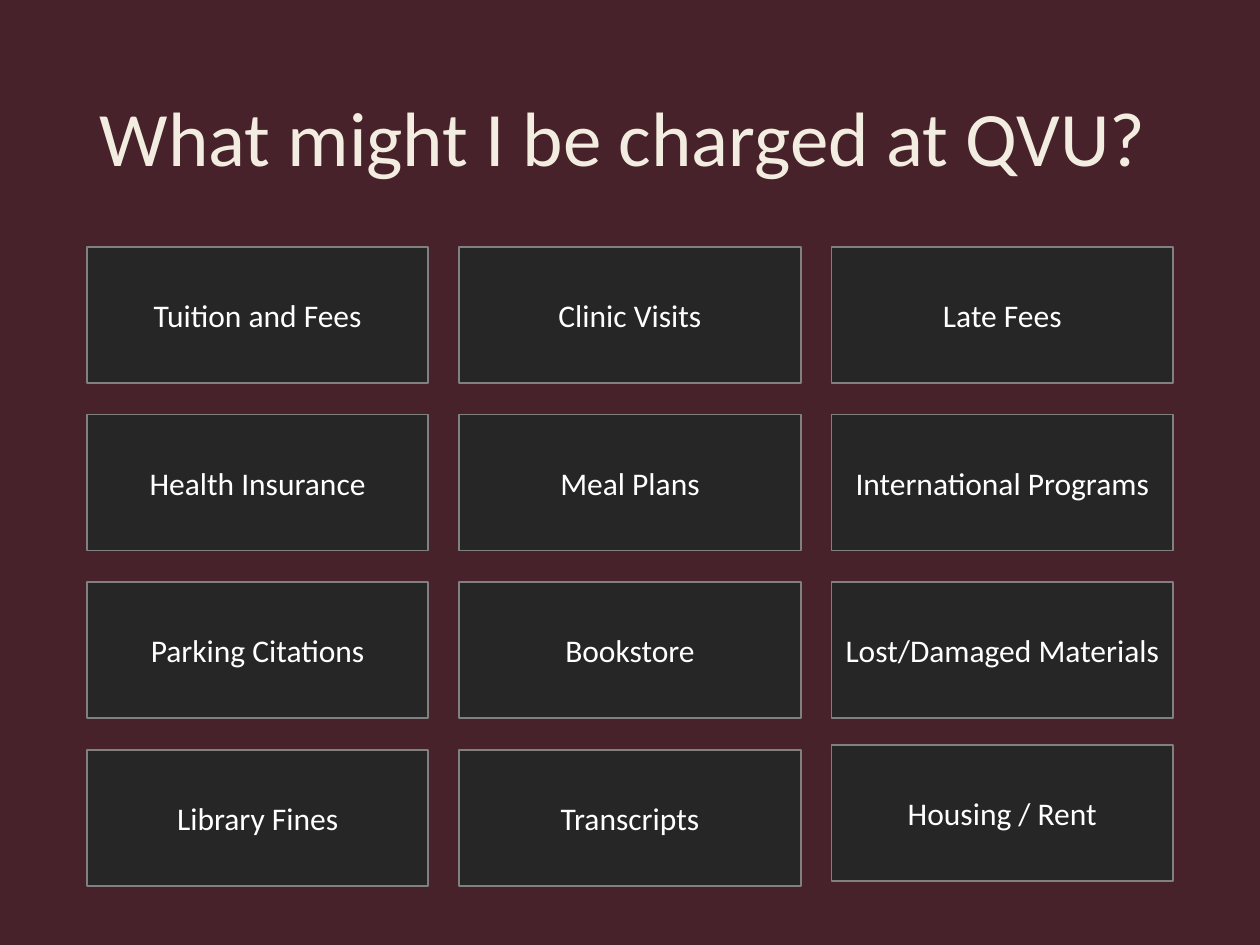
from pptx import Presentation
from pptx.dml.color import RGBColor
from pptx.enum.shapes import MSO_SHAPE as Shape
from pptx.enum.text import MSO_ANCHOR as Anchor, PP_ALIGN as Align
from pptx.util import Inches, Pt

WIDE, HIGH = 10, 7.5
LEFT, TOP = 0.69, 1.96
BOX = (2.71, 1.08)
COL, ROW = (WIDE - 2 * LEFT - BOX[0]) / 2, 1.33
LIFT = 0.04
COSTS = [
    ["Tuition and Fees", "Clinic Visits", "Late Fees"],
    ["Health Insurance", "Meal Plans", "International Programs"],
    ["Parking Citations", "Bookstore", "Lost/Damaged Materials"],
    ["Library Fines", "Transcripts", "Housing / Rent"],
]


def paint(fill, tone):
    """Give a fill one solid colour."""
    fill.solid()
    fill.fore_color.rgb = RGBColor.from_string(tone)


def place(shape, *area):
    """Set left, top, width and height in inches."""
    for name, size in zip(("left", "top", "width", "height"), area):
        setattr(shape, name, Inches(size))


def write(shape, text, size, tone, **form):
    """Put one formatted paragraph into a shape, centred in height."""
    frame = shape.text_frame
    frame.text = text
    frame.word_wrap = True
    frame.vertical_anchor = Anchor.MIDDLE
    para = frame.paragraphs[0]
    for name, value in form.items():
        setattr(para, name, value)
    font = para.runs[0].font
    for name, value in {"name": "Calibri", "size": Pt(size)}.items():
        setattr(font, name, value)
    paint(font.fill, tone)


def add_card(slide, text, left, top):
    """Draw one dark card with a centred label."""
    card = slide.shapes.add_shape(
        Shape.RECTANGLE, *map(Inches, (left, top, *BOX)))
    card.shadow.inherit = False
    paint(card.fill, "262626")
    paint(card.line.fill, "808080")
    card.line.width = Pt(1)
    write(card, text, 18, "FFFFFF", alignment=Align.CENTER)


def main():
    """Build the slide of charges and save it."""
    deck = Presentation()
    deck.slide_width, deck.slide_height = Inches(WIDE), Inches(HIGH)
    slide = deck.slides.add_slide(deck.slide_layouts[5])
    paint(slide.background.fill, "47222A")
    title = slide.shapes.title
    place(title, LEFT, 0.4, WIDE - 2 * LEFT, 1.45)
    write(title, "What might I be charged at QVU?", 44, "F3EDE1",
          alignment=Align.LEFT, line_spacing=0.9)
    for row, names in enumerate(COSTS):
        for col, name in enumerate(names):
            lift = LIFT if name == "Housing / Rent" else 0
            add_card(slide, name, LEFT + col * COL, TOP + row * ROW - lift)
    deck.save("out.pptx")


if __name__ == "__main__":
    main()
